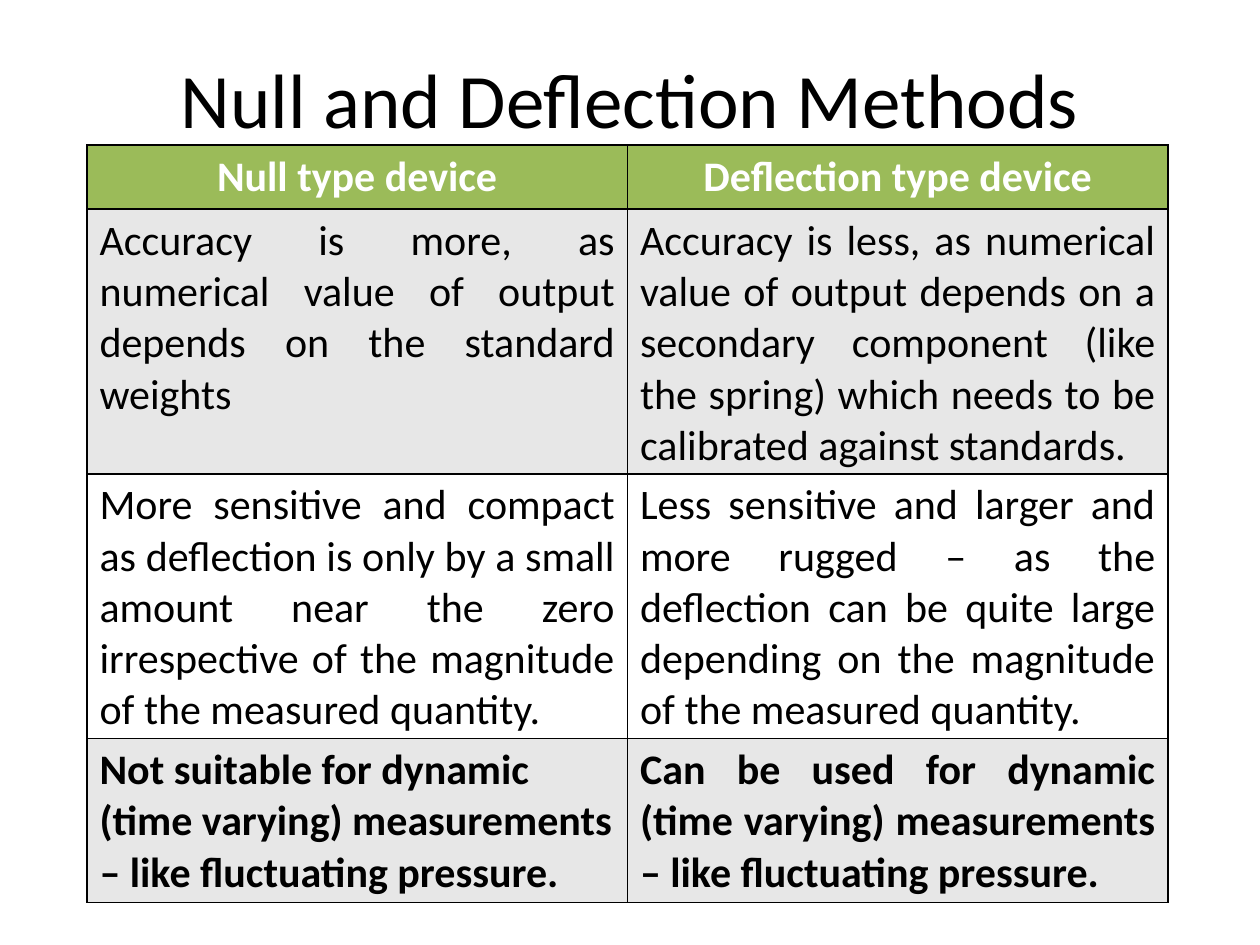
from dataclasses import dataclass

from lxml import etree
from pptx import Presentation
from pptx.dml.color import RGBColor
from pptx.enum.text import MSO_ANCHOR, PP_ALIGN
from pptx.oxml.ns import qn
from pptx.util import Inches, Pt

CENTER, JUSTIFY, LEFT = PP_ALIGN.CENTER, PP_ALIGN.JUSTIFY, PP_ALIGN.LEFT
MIDDLE = MSO_ANCHOR.MIDDLE
BLANK_LAYOUT = 6


@dataclass(frozen=True)
class Theme:
    font: str = "Calibri"
    title_size: int = 44
    table_size: int = 24
    ink: str = "000000"
    paper: str = "FFFFFF"
    header: str = "9BBB59"
    band: str = "E7E7E7"
    border_width: int = 1


class SlideBuilder:
    def __init__(self, slide, theme):
        self.slide = slide
        self.theme = theme

    def add_text(self, frame, text, size, color, align, bold=False):
        para = frame.paragraphs[0]
        para.alignment = align
        span = para.add_run()
        span.text = text
        formats = {"name": self.theme.font, "size": Pt(size), "bold": bold}
        for name, value in formats.items():
            setattr(span.font, name, value)
        span.font.color.rgb = RGBColor.from_string(color)

    def title(self, text, left, top, width, height):
        box = self.slide.shapes.add_textbox(
            Inches(left), Inches(top), Inches(width), Inches(height))
        frame = box.text_frame
        frame.word_wrap = True
        frame.vertical_anchor = MIDDLE
        self.add_text(frame, text, self.theme.title_size, self.theme.ink, CENTER)

    def border(self, cell):
        properties = cell._tc.get_or_add_tcPr()
        for index, side in enumerate(("lnL", "lnR", "lnT", "lnB")):
            line = etree.Element(qn(f"a:{side}"), w=str(Pt(self.theme.border_width)))
            fill = etree.SubElement(line, qn("a:solidFill"))
            etree.SubElement(fill, qn("a:srgbClr"), val=self.theme.ink)
            # Borders must come before the cell fill.
            properties.insert(index, line)

    def table(self, rows, left, top, column_width, heights):
        """Each row is (fill, text colour, bold, [(text, alignment), ...])."""
        columns = len(rows[0][3])
        table = self.slide.shapes.add_table(
            len(rows), columns, Inches(left), Inches(top),
            Inches(column_width * columns), Inches(sum(heights))).table
        for column in table.columns:
            column.width = Inches(column_width)
        for row_index, (fill, color, bold, entries) in enumerate(rows):
            table.rows[row_index].height = Inches(heights[row_index])
            for column_index, (text, align) in enumerate(entries):
                cell = table.cell(row_index, column_index)
                cell.fill.solid()
                cell.fill.fore_color.rgb = RGBColor.from_string(fill)
                self.border(cell)
                self.add_text(cell.text_frame, text, self.theme.table_size,
                              color, align, bold)


def main():
    deck = Presentation()
    deck.slide_width, deck.slide_height = Inches(10), Inches(7.5)
    theme = Theme()
    page = SlideBuilder(
        deck.slides.add_slide(deck.slide_layouts[BLANK_LAYOUT]), theme)

    page.title("Null and Deflection Methods", 0.5, 0.15, 9, 1.25)
    comparison = [
        (theme.header, theme.paper, True, [
            ("Null type device", CENTER),
            ("Deflection type device", CENTER)]),
        (theme.band, theme.ink, False, [
            ("Accuracy is more, as numerical value of output depends on the "
             "standard weights", JUSTIFY),
            ("Accuracy is less, as numerical value of output depends on a "
             "secondary component (like the spring) which needs to be "
             "calibrated against standards.", JUSTIFY)]),
        (theme.paper, theme.ink, False, [
            ("More sensitive and compact as deflection is only by a small "
             "amount near the zero irrespective of the magnitude of the "
             "measured quantity.", JUSTIFY),
            ("Less sensitive and larger and more rugged – as the deflection "
             "can be quite large depending on the magnitude of the measured "
             "quantity.", JUSTIFY)]),
        (theme.band, theme.ink, True, [
            ("Not suitable for dynamic (time varying) measurements – like "
             "fluctuating pressure.", LEFT),
            ("Can be used for dynamic (time varying) measurements – like "
             "fluctuating pressure.", JUSTIFY)]),
    ]
    page.table(comparison, 0.69, 1.15, 4.29, [0.51, 2.01, 2.01, 1.26])
    deck.save("out.pptx")


if __name__ == "__main__":
    main()
